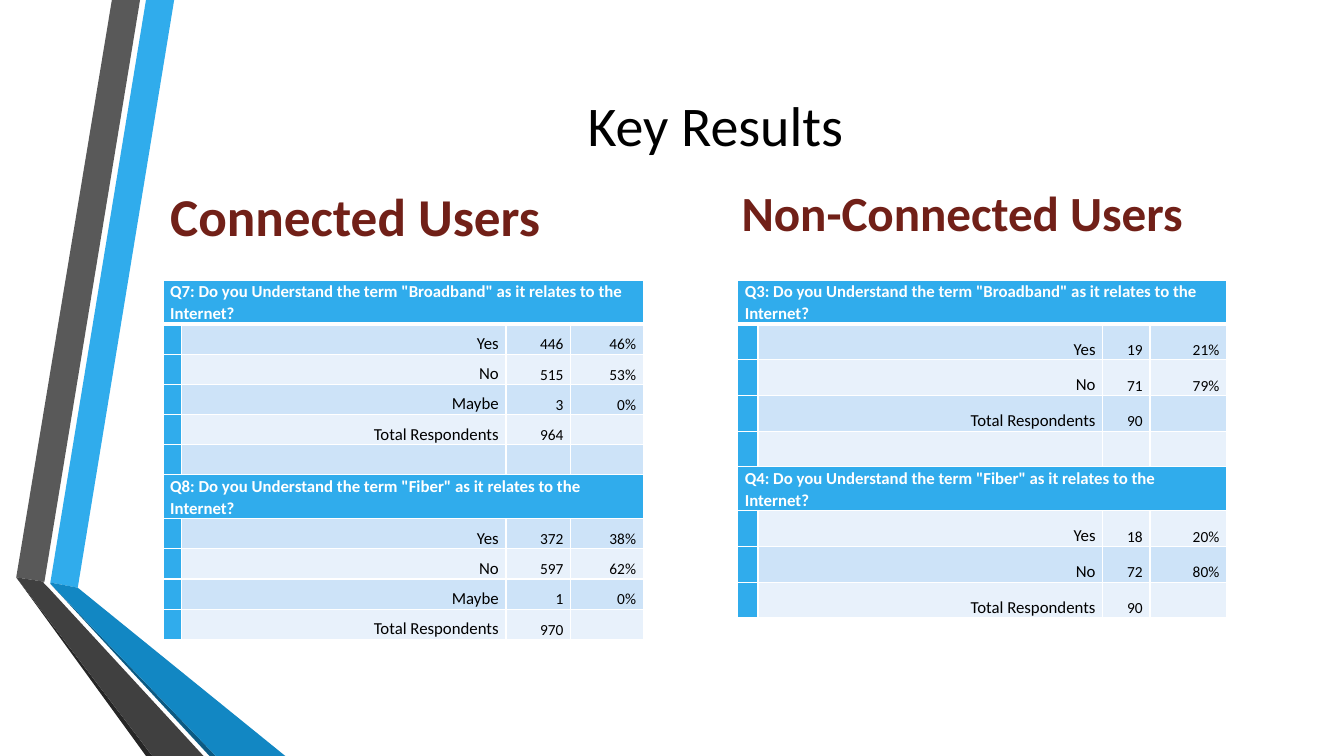
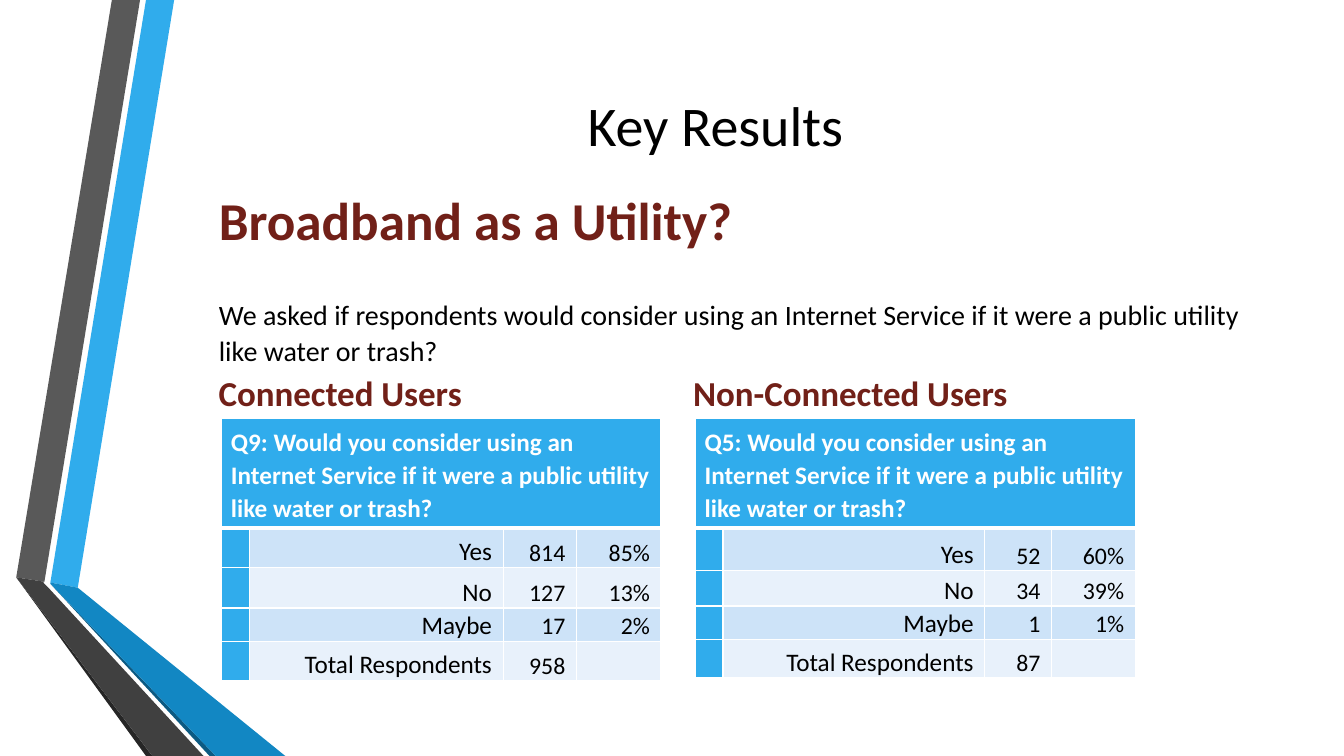
from dataclasses import dataclass
from typing import Optional, Union

from lxml.etree import SubElement
from pptx import Presentation
from pptx.dml.color import RGBColor
from pptx.enum.text import MSO_ANCHOR as Anchor, MSO_AUTO_SIZE as AutoSize, PP_ALIGN as Align
from pptx.oxml.ns import qn
from pptx.util import Cm, Pt

WHITE = RGBColor(0xFF, 0xFF, 0xFF)
BLACK = RGBColor(0x00, 0x00, 0x00)
MAROON = RGBColor(0x71, 0x20, 0x18)
BLUE = RGBColor(0x30, 0xAC, 0xEC)
MID_BLUE = RGBColor(0x12, 0x87, 0xC3)
DEEP_BLUE = RGBColor(0x0C, 0x5A, 0x82)
GRAY = RGBColor(0x59, 0x59, 0x59)
DARK_GRAY = RGBColor(0x40, 0x40, 0x40)
CHARCOAL = RGBColor(0x26, 0x26, 0x26)
ROW_LIGHT = RGBColor(0xE8, 0xF1, 0xFB)
ROW_DARK = RGBColor(0xCD, 0xE3, 0xF8)

FONT = "Calibri"
LINE_SPACING = 1.07
SLIDE_WIDTH, SLIDE_HEIGHT = 33.87, 19.05
HEADING_HEIGHT = 2.46
TITLE_ONLY, TITLE_AND_CONTENT = 5, 1


@dataclass(frozen=True)
class Band:
    color: RGBColor
    points: tuple[tuple[float, float], ...]


@dataclass(frozen=True)
class Heading:
    text: str
    left: float
    top: float
    width: float
    size: float


@dataclass(frozen=True)
class TableStyle:
    label_size: float
    number_size: float
    header_margins: tuple[float, float]
    cell_margins: tuple[float, float]


@dataclass(frozen=True)
class SurveyTable:
    left: float
    top: float
    column_widths: tuple[float, ...]
    row_heights: tuple[float, ...]
    rows: tuple[Union[str, tuple[str, str, str]], ...]
    style: TableStyle


BANDS = (
    Band(BLUE, ((1.27, 14.68), (1.96, 14.81), (4.39, 0), (3.68, 0))),
    Band(GRAY, ((3.53, 0), (2.82, 0), (0.41, 14.55), (1.12, 14.66))),
    Band(CHARCOAL, ((0.41, 14.55), (3.68, 19.05), (3.84, 19.05))),
    Band(DEEP_BLUE, ((1.27, 14.71), (5.28, 19.05), (5.44, 19.05))),
    Band(MID_BLUE, ((1.27, 14.68), (1.27, 14.71), (5.44, 19.05), (7.19, 19.05), (1.96, 14.81))),
    Band(DARK_GRAY, ((5.13, 19.05), (1.22, 14.81), (1.09, 14.68), (1.12, 14.66),
                     (0.41, 14.55), (3.84, 19.05))),
)

COMPACT = TableStyle(12, 11, (0.18, 0), (0.18, 0))
LARGE = TableStyle(18, 17, (0.23, 0.1), (0.28, 0))
BLANK_ROW = ("", "", "")
BROADBAND = 'Do you Understand the term "Broadband" as it relates to the Internet?'
FIBER = 'Do you Understand the term "Fiber" as it relates to the Internet?'
UTILITY = "Would you consider using an Internet Service if it were a public utility like water or trash?"

TERM_HEADINGS = (
    Heading("Connected Users", 4.04, 4.37, 12.07, 38),
    Heading("Non-Connected Users", 18.44, 4.37, 12.07, 35.1),
)
TERM_TABLES = (
    SurveyTable(
        4.11, 7.06, (0.46, 8.18, 1.63, 1.83),
        (0.79,) + (0.76,) * 5 + (0.89,) + (0.76,) * 4,
        (
            f"Q7: {BROADBAND}",
            ("Yes", "446", "46%"),
            ("No", "515", "53%"),
            ("Maybe", "3", "0%"),
            ("Total Respondents", "964", ""),
            BLANK_ROW,
            f"Q8: {FIBER}",
            ("Yes", "372", "38%"),
            ("No", "597", "62%"),
            ("Maybe", "1", "0%"),
            ("Total Respondents", "970", ""),
        ),
        COMPACT,
    ),
    SurveyTable(
        18.59, 7.06, (0.51, 8.69, 1.19, 1.93),
        (0.81,) + (0.9,) * 4 + (0.84,) + (0.9,) * 3,
        (
            f"Q3: {BROADBAND}",
            ("Yes", "19", "21%"),
            ("No", "71", "79%"),
            ("Total Respondents", "90", ""),
            BLANK_ROW,
            f"Q4: {FIBER}",
            ("Yes", "18", "20%"),
            ("No", "72", "80%"),
            ("Total Respondents", "90", ""),
        ),
        COMPACT,
    ),
)

UTILITY_HEADINGS = (
    Heading("Connected Users", 5.26, 9.17, 11.38, 25),
    Heading("Non-Connected Users", 17.22, 9.17, 12.55, 25),
)
UTILITY_TABLES = (
    SurveyTable(
        5.59, 10.54, (0.69, 6.4, 1.85, 2.13), (2.77, 0.99, 1.02, 0.84, 0.99),
        (
            f"Q9: {UTILITY}",
            ("Yes", "814", "85%"),
            ("No", "127", "13%"),
            ("Maybe", "17", "2%"),
            ("Total Respondents", "958", ""),
        ),
        LARGE,
    ),
    SurveyTable(
        17.53, 10.54, (0.69, 6.6, 1.68, 2.11), (2.77, 1.07, 0.89, 0.84, 0.97),
        (
            f"Q5: {UTILITY}",
            ("Yes", "52", "60%"),
            ("No", "34", "39%"),
            ("Maybe", "1", "1%"),
            ("Total Respondents", "87", ""),
        ),
        LARGE,
    ),
)


def format_paragraph(paragraph, size: float, color: RGBColor, bold: bool = False,
                     alignment: Align = Align.LEFT, before: float = 0, after: float = 0) -> None:
    paragraph.alignment = alignment
    paragraph.line_spacing = LINE_SPACING
    paragraph.space_before = Pt(before)
    paragraph.space_after = Pt(after)
    for run in paragraph.runs:
        run.font.name = FONT
        run.font.size = Pt(size)
        run.font.bold = bold
        run.font.color.rgb = color


def place(shape, left: float, top: float, width: float, height: float) -> None:
    shape.left, shape.top, shape.width, shape.height = map(Cm, (left, top, width, height))


def move_bands_to_master(slide, master) -> None:
    for index, band in enumerate(BANDS):
        points = [(Cm(x), Cm(y)) for x, y in band.points]
        builder = slide.shapes.build_freeform(*points[0])
        builder.add_line_segments(points[1:], close=True)
        shape = builder.convert_to_shape()
        shape.shadow.inherit = False
        shape.fill.solid()
        shape.fill.fore_color.rgb = band.color
        shape.line.fill.background()
        shape.element.nvSpPr.cNvPr.set("id", str(100 + index))
        master.shapes.element.insert(2 + index, shape.element)


def fill_title(slide, text: str) -> None:
    title = slide.shapes.title
    place(title, 4.11, 1.91, 27.84, HEADING_HEIGHT)
    text_frame = title.text_frame
    text_frame.text = text
    text_frame.auto_size = AutoSize.NONE
    text_frame.vertical_anchor = Anchor.MIDDLE
    paragraph = text_frame.paragraphs[0]
    format_paragraph(paragraph, 40, BLACK, alignment=Align.CENTER)
    paragraph.line_spacing = 1.0


def fill_body(slide, heading: str, text: str) -> None:
    body = slide.placeholders[1]
    place(body, 5.26, 4.37, 26.47, 5.11)
    text_frame = body.text_frame
    text_frame.text = f"{heading}\n{text}"
    text_frame.auto_size = AutoSize.NONE
    text_frame.vertical_anchor = Anchor.MIDDLE
    first, second = text_frame.paragraphs
    format_paragraph(first, 38, MAROON, bold=True, before=2, after=31.5)
    format_paragraph(second, 20, BLACK, after=8)
    for paragraph in text_frame.paragraphs:
        properties = paragraph._p.get_or_add_pPr()
        properties.set("marL", "0")
        properties.set("indent", "0")
        SubElement(properties, qn("a:buNone"))


def add_heading(slide, heading: Heading) -> None:
    text_box = slide.shapes.add_textbox(
        Cm(heading.left), Cm(heading.top), Cm(heading.width), Cm(HEADING_HEIGHT))
    text_frame = text_box.text_frame
    text_frame.word_wrap = True
    text_frame.text = heading.text
    format_paragraph(text_frame.paragraphs[0], heading.size, MAROON, bold=True, before=2)


def set_borders(cell, top: float, bottom: float) -> None:
    properties = cell._tc.get_or_add_tcPr()
    for side, width in (("L", 1), ("R", 1), ("T", top), ("B", bottom)):
        line = SubElement(properties, qn(f"a:ln{side}"), w=str(Pt(width)))
        fill = SubElement(line, qn("a:solidFill"))
        SubElement(fill, qn("a:srgbClr"), val=str(WHITE))


def fill_cell(cell, text: str, size: float, fill: RGBColor, margins: tuple[float, float],
              color: RGBColor = BLACK, bold: bool = False,
              alignment: Optional[Align] = Align.RIGHT) -> None:
    cell.fill.solid()
    cell.fill.fore_color.rgb = fill
    cell.vertical_anchor = Anchor.BOTTOM
    cell.margin_left = cell.margin_right = Cm(margins[0])
    cell.margin_top = cell.margin_bottom = Cm(margins[1])
    cell.text_frame.text = text
    paragraph = cell.text_frame.paragraphs[0]
    format_paragraph(paragraph, size, color, bold, alignment)
    if not text:
        SubElement(paragraph._p, qn("a:endParaRPr"), sz=str(int(size * 100)))


def add_survey_table(slide, survey: SurveyTable) -> None:
    style = survey.style
    table = slide.shapes.add_table(
        len(survey.rows), len(survey.column_widths), Cm(survey.left), Cm(survey.top),
        Cm(sum(survey.column_widths)), Cm(sum(survey.row_heights))).table
    for column, width in zip(table.columns, survey.column_widths):
        column.width = Cm(width)
    for index, (row, height, content) in enumerate(
            zip(table.rows, survey.row_heights, survey.rows)):
        row.height = Cm(height)
        cells = list(row.cells)
        for cell in cells:
            set_borders(cell, top=3 if index == 1 else 1, bottom=3 if index == 0 else 1)
        if isinstance(content, str):
            cells[0].merge(cells[-1])
            fill_cell(cells[0], content, style.label_size, BLUE, style.header_margins,
                      WHITE, True, Align.LEFT)
            continue
        row_fill = ROW_DARK if index % 2 else ROW_LIGHT
        fills = (BLUE, row_fill, row_fill, row_fill)
        sizes = (style.number_size, style.label_size, style.number_size, style.number_size)
        for cell, text, size, fill in zip(cells, ("", *content), sizes, fills):
            fill_cell(cell, text, size, fill, style.cell_margins)


def add_results_slide(presentation, layout_index: int, tables: tuple[SurveyTable, ...],
                      headings: tuple[Heading, ...]):
    slide = presentation.slides.add_slide(presentation.slide_layouts[layout_index])
    fill_title(slide, "Key Results")
    for survey in tables:
        add_survey_table(slide, survey)
    for heading in headings:
        add_heading(slide, heading)
    return slide


def main() -> None:
    presentation = Presentation()
    presentation.slide_width = Cm(SLIDE_WIDTH)
    presentation.slide_height = Cm(SLIDE_HEIGHT)
    terms = add_results_slide(presentation, TITLE_ONLY, TERM_TABLES, TERM_HEADINGS)
    move_bands_to_master(terms, presentation.slide_master)
    utility = add_results_slide(presentation, TITLE_AND_CONTENT, UTILITY_TABLES, UTILITY_HEADINGS)
    fill_body(
        utility, "Broadband as a Utility?",
        "We asked if respondents would consider using an Internet Service "
        "if it were a public utility like water or trash?")
    presentation.save("out.pptx")


if __name__ == "__main__":
    main()
